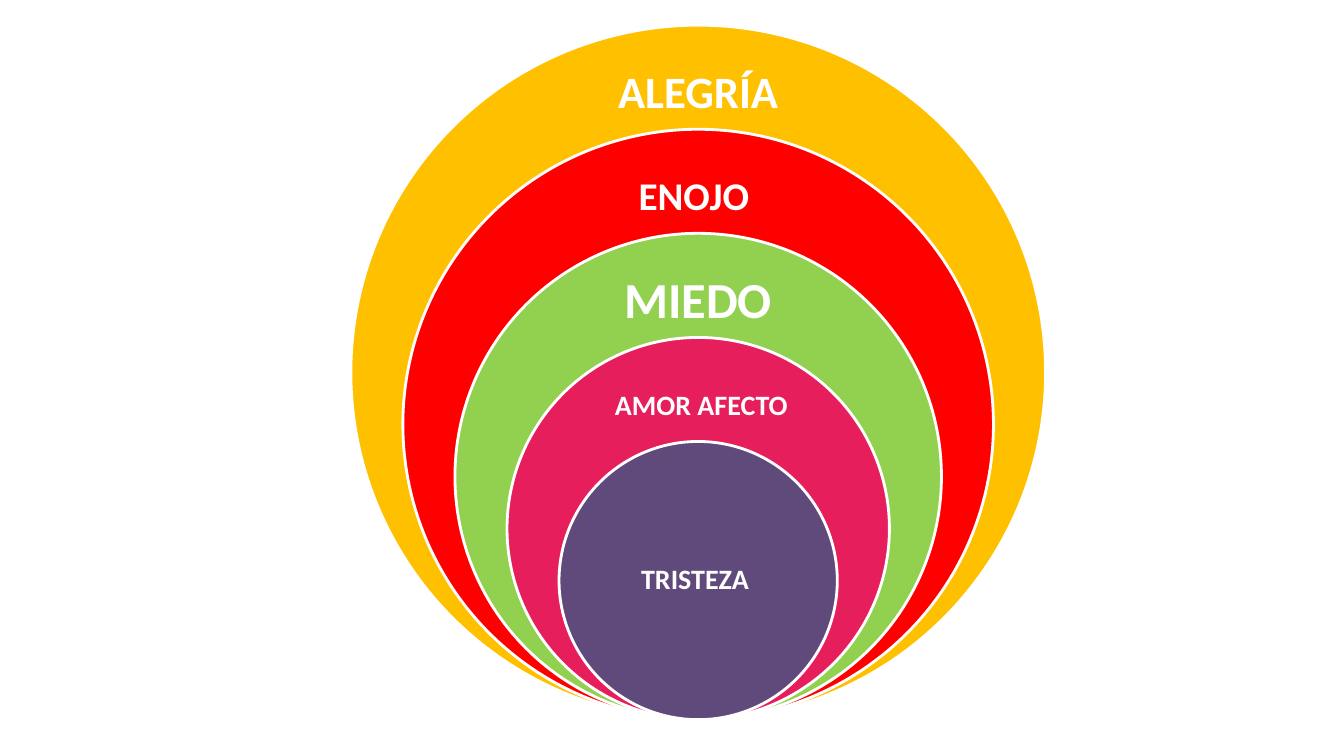
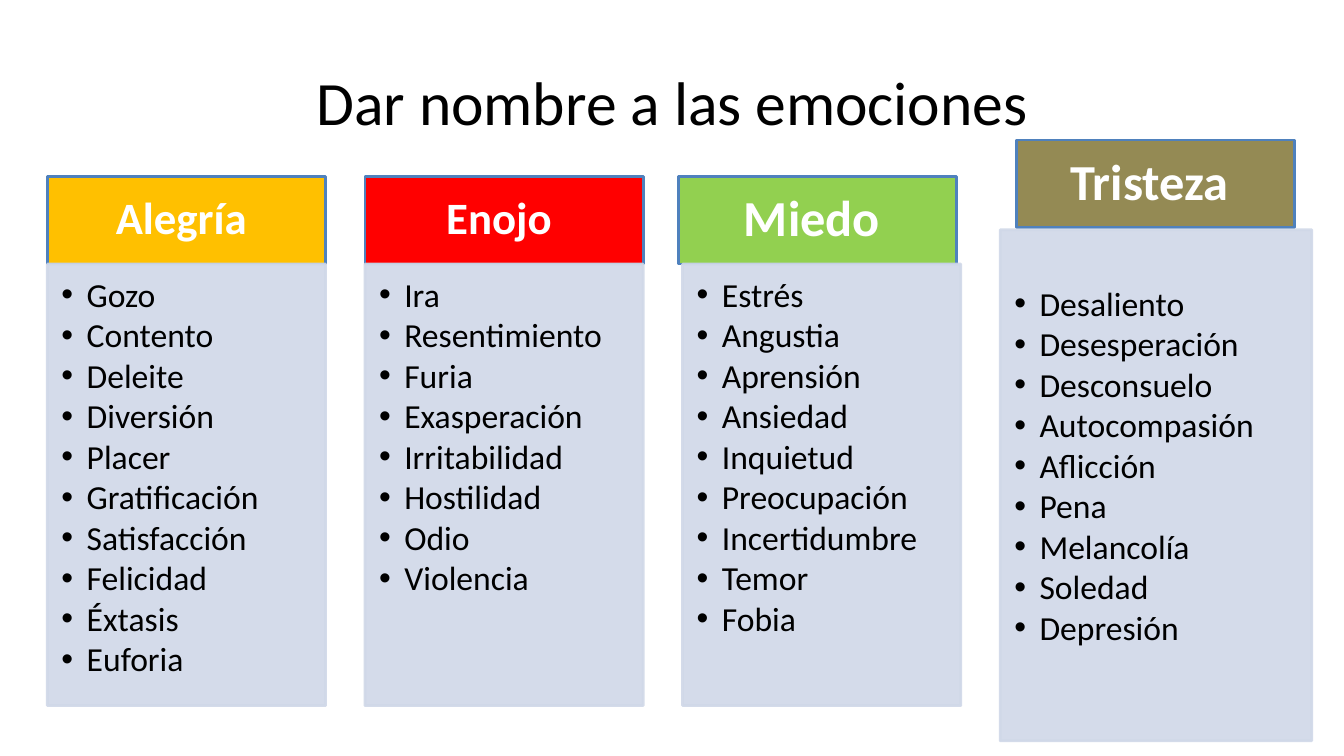
from lxml import etree
from pptx import Presentation
from pptx import util as u
from pptx.dml.color import RGBColor
from pptx.enum import shapes, text
from pptx.oxml import ns

# Colours and type
GOLD = RGBColor(0xFF, 0xC0, 0x00)
RED = RGBColor(0xFF, 0x00, 0x00)
GREEN = RGBColor(0x92, 0xD0, 0x50)
PINK = RGBColor(0xE6, 0x1E, 0x5C)
PURPLE = RGBColor(0x60, 0x4A, 0x7B)
OLIVE = RGBColor(0x94, 0x8A, 0x54)
BLUE = RGBColor(0x4F, 0x81, 0xBD)
PALE = RGBColor(0xD0, 0xD8, 0xE8)
WHITE = RGBColor(0xFF, 0xFF, 0xFF)
BLACK = RGBColor(0x00, 0x00, 0x00)
FONT = "Calibri"
KIND = shapes.MSO_SHAPE

# Content: rings from the outside in (name, size, fill)
RINGS = [
    ("ALEGRÍA", 32, GOLD),
    ("ENOJO ", 28, RED),
    ("MIEDO", 36, GREEN),
    (" AMOR AFECTO", 20, PINK),
    ("TRISTEZA ", 20, PURPLE),
]
TITLE = "Dar nombre a las emociones"

# Columns: head, size, fill, head left and top, card (top, width, height, top inset), words
CARD = (262, 276, 438, 14)
COLUMNS = [
    ("Alegría ", 32, GOLD, 47, 175, CARD,
     ["Gozo", "Contento", "Deleite", "Diversión", "Placer", "Gratificación",
      "Satisfacción", "Felicidad", "Éxtasis", "Euforia"]),
    ("Enojo ", 32, RED, 362, 175, CARD,
     ["Ira", "Resentimiento", "Furia", "Exasperación", "Irritabilidad",
      "Hostilidad", "Odio", "Violencia"]),
    ("Miedo ", 36, GREEN, 673, 175, CARD,
     ["Estrés", "Angustia", "Aprensión", "Ansiedad", "Inquietud",
      "Preocupación", "Incertidumbre", "Temor", "Fobia"]),
    ("Tristeza ", 36, OLIVE, 1008, 139, (228, 309, 507, 57),
     ["Desaliento", "Desesperación", "Desconsuelo", "Autocompasión",
      "Aflicción", "Pena", "Melancolía", "Soledad", "Depresión"]),
]


def px(n):
    """Length in EMU, 100 px to the inch."""
    return u.Emu(round(n * 9144))


def shape(slide, kind, box, fill, line):
    item = slide.shapes.add_shape(kind, *map(px, box))
    item.shadow.inherit = False
    item.fill.solid()
    item.fill.fore_color.rgb = fill
    item.line.color.rgb = line
    item.line.width = u.Pt(2)
    return item


def label(slide, box):
    return slide.shapes.add_textbox(*map(px, box))


def bullet(para):
    props = para._p.get_or_add_pPr()
    props.set("marL", str(px(25)))
    props.set("indent", str(px(-25)))
    etree.SubElement(props, ns.qn("a:buFont")).set("typeface", "Arial")
    etree.SubElement(props, ns.qn("a:buChar")).set("char", "•")


def write(item, lines, size, color, bold=False, inset=(0, 0, 0, 0), space=0.9, marks=False):
    """Fill a shape: centred lines, or a bulleted list from the top."""
    frame = item.text_frame
    frame.word_wrap = True
    frame.vertical_anchor = text.MSO_ANCHOR.TOP if marks else text.MSO_ANCHOR.MIDDLE
    (frame.margin_left, frame.margin_top,
     frame.margin_right, frame.margin_bottom) = map(px, inset)
    for i, line in enumerate(lines):
        para = frame.add_paragraph() if i else frame.paragraphs[0]
        para.text = line
        para.alignment = text.PP_ALIGN.LEFT if marks else text.PP_ALIGN.CENTER
        para.line_spacing = space
        if marks:
            para.space_after = u.Pt(3)
            bullet(para)
        font = para.font
        font.name, font.size, font.bold = FONT, u.Pt(size), bold
        font.color.rgb = color


def fade(item, share):
    """Make fill and line partly opaque (share in percent)."""
    for tint in item._element.spPr.iter(ns.qn("a:srgbClr")):
        etree.SubElement(tint, ns.qn("a:alpha")).set("val", str(share * 1000))


def draw_rings(slide):
    mid, base, outer, inner = 692.5, 714, 689, 276
    step = (outer - inner) / (len(RINGS) - 1)
    wide, high = 260, 68
    for i, (name, size, fill) in enumerate(RINGS):
        side = outer - i * step
        top = base - side
        shape(slide, KIND.OVAL, (mid - side / 2, top, side, side), fill, WHITE)
        last = i == len(RINGS) - 1
        drop = (side - high) / 2 if last else high / 2
        write(label(slide, (mid - wide / 2, top + drop, wide, high)),
              [name], size, WHITE, bold=True)


def draw_columns(slide):
    write(label(slide, (117, 12, 1100, 176)), [TITLE], 44, BLACK, space=1.0)
    left, pitch = 47, 315
    for i, (name, size, fill, x, y, card, words) in enumerate(COLUMNS):
        head = shape(slide, KIND.RECTANGLE, (x, y, 276, 87), fill, BLUE)
        write(head, [name], size, WHITE, bold=True)
        top, wide, high, pad = card
        body = shape(slide, KIND.RECTANGLE, (left + i * pitch, top, wide, high), PALE, PALE)
        fade(body, 90)
        write(body, words, 24, BLACK, inset=(14, pad, 19, 21), marks=True)


def main():
    deck = Presentation()
    deck.slide_width, deck.slide_height = px(1333), px(750)
    for draw in (draw_rings, draw_columns):
        draw(deck.slides.add_slide(deck.slide_layouts[6]))
    deck.save("out.pptx")


if __name__ == "__main__":
    main()
